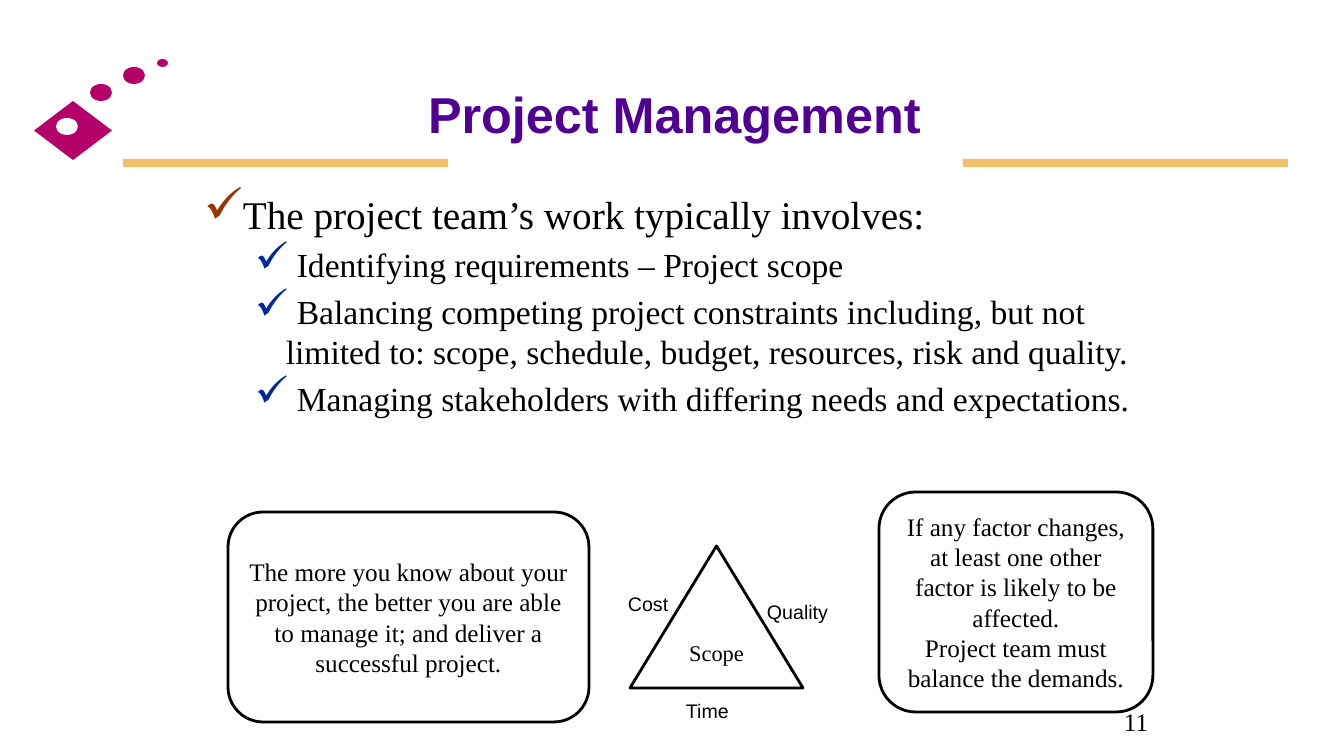
from dataclasses import dataclass

from lxml.etree import SubElement
from pptx import Presentation
from pptx.dml.color import RGBColor
from pptx.enum.shapes import MSO_SHAPE as Preset
from pptx.enum.text import MSO_ANCHOR as Anchor, PP_ALIGN as Align
from pptx.oxml.ns import qn
from pptx.util import Emu, Pt


@dataclass(frozen=True)
class Theme:
    serif: str = "Times New Roman"
    sans: str = "Arial"
    ink: str = "000000"
    paper: str = "FFFFFF"
    title: str = "500093"
    bar: str = "F6BF69"
    ornament: str = "B50069"
    main_check: str = "993300"
    sub_check: str = "00279F"
    title_size: int = 36
    main_size: int = 28
    sub_size: int = 24
    box_size: int = 18
    scope_size: int = 16
    label_size: int = 14
    outline: int = 2


theme = Theme()
SCALE = 914400 / 100.8


def px(*lengths):
    return [Emu(round(length * SCALE)) for length in lengths]


def write(shape, *lines, size, font=theme.serif, color=theme.ink, bold=False,
          align=Align.LEFT, anchor=Anchor.TOP):
    frame = shape.text_frame
    frame.word_wrap = True
    frame.vertical_anchor = anchor
    frame.text = "\n".join(lines)
    for paragraph in frame.paragraphs:
        paragraph.alignment = align
        paragraph.font.size = Pt(size)
        paragraph.font.name = font
        paragraph.font.bold = bold
        paragraph.font.color.rgb = RGBColor.from_string(color)
    return frame.paragraphs


presentation = Presentation()
presentation.slide_width, presentation.slide_height = px(1344, 756)
slide = presentation.slides.add_slide(presentation.slide_layouts[6])
shapes = slide.shapes

ornaments = [
    (Preset.RECTANGLE, (123, 159, 325, 8), theme.bar),
    (Preset.RECTANGLE, (963, 159, 325, 8), theme.bar),
    (Preset.DIAMOND, (34, 101, 78, 59), theme.ornament),
    (Preset.OVAL, (56, 118, 22, 17), theme.paper),
    (Preset.OVAL, (90, 84, 22, 17), theme.ornament),
    (Preset.OVAL, (123, 67, 22, 17), theme.ornament),
    (Preset.OVAL, (157, 59, 11, 8), theme.ornament),
]
for preset, place, color in ornaments:
    shape = shapes.add_shape(preset, *px(*place))
    shape.shadow.inherit = False
    shape.fill.solid()
    shape.fill.fore_color.rgb = RGBColor.from_string(color)
    shape.line.fill.background()

title = shapes.add_textbox(*px(225, 65, 899, 95))
heading = write(title, "Project Management", size=theme.title_size, font=theme.sans,
                color=theme.title, bold=True, align=Align.CENTER, anchor=Anchor.MIDDLE)
heading[0].line_spacing = 1.04

body = shapes.add_textbox(*px(194, 185, 958, 294))
points = write(
    body,
    "The project team’s work typically involves:",
    " Identifying requirements – Project scope",
    " Balancing competing project constraints including, but not limited to: "
    "scope, schedule, budget, resources, risk and quality.",
    " Managing stakeholders with differing needs and expectations.",
    size=theme.sub_size,
)
points[0].font.size = Pt(theme.main_size)
for index, paragraph in enumerate(points):
    level = min(index, 1)
    margin, indent = px(*[(38, -38), (82, -31)][level])
    paragraph.level = level
    paragraph.space_before = Pt(paragraph.font.size.pt * 0.2)
    properties = paragraph._p.get_or_add_pPr()
    properties.set("marL", str(margin))
    properties.set("indent", str(indent))
    bullet_color = SubElement(properties, qn("a:buClr"))
    check = [theme.main_check, theme.sub_check][level]
    SubElement(bullet_color, qn("a:srgbClr"), val=check)
    SubElement(properties, qn("a:buSzPct"), val="127000")
    SubElement(properties, qn("a:buChar"), char="✓")
    properties.append(properties.find(qn("a:defRPr")))

page_number = shapes.add_textbox(*px(1114, 701, 61, 40))
write(page_number, "11", size=theme.box_size)

figures = [
    (Preset.ROUNDED_RECTANGLE, (228, 512, 361, 210), theme.box_size,
     ["The more you know about your project, the better you are able to manage it; "
      "and deliver a successful project."]),
    (Preset.ROUNDED_RECTANGLE, (879, 492, 274, 220), theme.box_size,
     ["If any factor changes, at least one other factor is likely to be affected.",
      "Project team must balance the demands."]),
    (Preset.ISOSCELES_TRIANGLE, (630, 546, 173, 142), theme.scope_size, ["Scope"]),
]
for preset, place, size, lines in figures:
    shape = shapes.add_shape(preset, *px(*place))
    shape.shadow.inherit = False
    shape.fill.solid()
    shape.fill.fore_color.rgb = RGBColor.from_string(theme.paper)
    shape.line.color.rgb = RGBColor.from_string(theme.ink)
    shape.line.width = Pt(theme.outline)
    write(shape, *lines, size=size, align=Align.CENTER, anchor=Anchor.MIDDLE)

labels = [
    ("Quality", (757, 595, 88, 34)),
    ("Time", (676, 694, 118, 34)),
    ("Cost", (618, 587, 82, 34)),
]
for text, place in labels:
    label = shapes.add_textbox(*px(*place))
    write(label, text, size=theme.label_size, font=theme.sans)

presentation.save("out.pptx")
